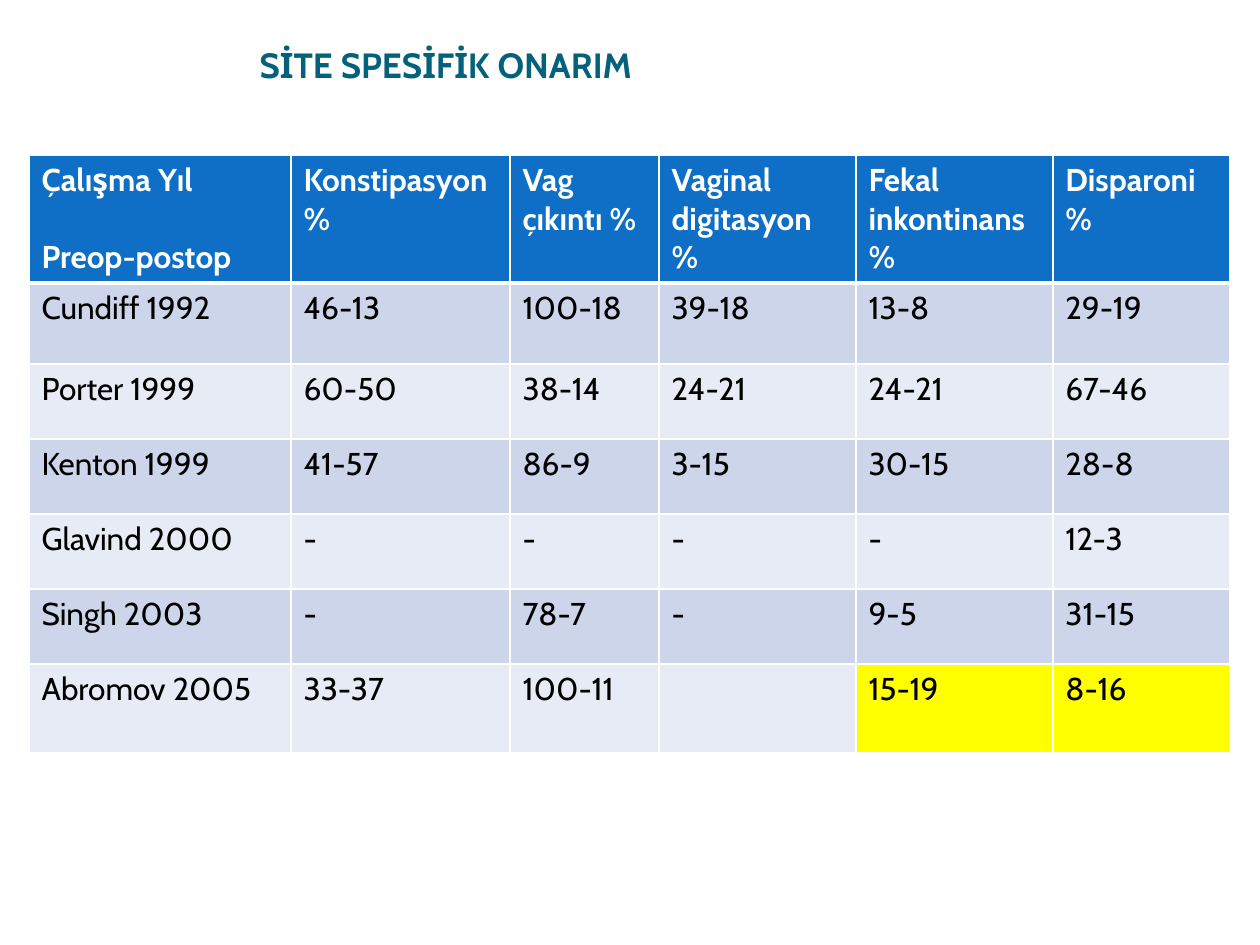
"""Builds a one-slide table of site-specific repair results."""
import pptx
import pptx.dml.color
import pptx.enum.text
import pptx.oxml
import pptx.oxml.ns
import pptx.util
from dataclasses import dataclass

SCALE = 914400 / 126


def px(n):
    return pptx.util.Emu(round(n * SCALE))


def rgb(code):
    return pptx.dml.color.RGBColor.from_string(code)


@dataclass(frozen=True)
class Theme:
    font: str = "Cabin"
    title: str = "04617B"
    head: str = "0F6FC6"
    bands: tuple = ("CCD5EA", "E7EBF5")
    mark: str = "FFFF00"
    light: str = "FFFFFF"
    dark: str = "000000"
    big: int = 20
    body: int = 18
    thin: int = 1
    thick: int = 3
    gap: int = 22


class Deck:
    def __init__(self, theme, wide, high):
        self.theme = theme
        self.prs = pptx.Presentation()
        self.prs.slide_width, self.prs.slide_height = px(wide), px(high)
        self.slide = self.prs.slides.add_slide(self.prs.slide_layouts[5])

    def style(self, para, size, color, bold):
        para.alignment = pptx.enum.text.PP_ALIGN.LEFT
        look = {"name": self.theme.font, "size": pptx.util.Pt(size), "bold": bold}
        for run in para.runs:
            for key, val in look.items():
                setattr(run.font, key, val)
            run.font.color.rgb = rgb(color)

    def title(self, text, left, top, width, height):
        shape = self.slide.shapes.title
        box = {"left": left, "top": top, "width": width, "height": height}
        for key, val in box.items():
            setattr(shape, key, px(val))
        frame = shape.text_frame
        frame.text = text
        frame.word_wrap = True
        frame.vertical_anchor = pptx.enum.text.MSO_ANCHOR.MIDDLE
        self.style(frame.paragraphs[0], self.theme.big, self.theme.title, True)

    def edge(self, cell, side, points):
        line = pptx.oxml.parse_xml(
            f'<a:ln{side} {pptx.oxml.ns.nsdecls("a")} w="{pptx.util.Pt(points)}">'
            f'<a:solidFill><a:srgbClr val="{self.theme.light}"/></a:solidFill></a:ln{side}>')
        cell._tc.get_or_add_tcPr().append(line)

    def cell(self, cell, text, row, fill):
        theme, head = self.theme, row == 0
        widths = {"L": theme.thin, "R": theme.thin,
                  "T": theme.thick if row == 1 else theme.thin,
                  "B": theme.thick if head else theme.thin}
        for side, points in widths.items():
            self.edge(cell, side, points)
        cell.fill.solid()
        cell.fill.fore_color.rgb = rgb(fill)
        cell.text = text
        for para in cell.text_frame.paragraphs:
            self.style(para, theme.body, theme.light if head else theme.dark, head)

    def table(self, rows, left, top, cols, highs, marks):
        theme = self.theme
        frame = self.slide.shapes.add_table(
            len(rows), len(cols), px(left), px(top), px(sum(cols)), px(sum(highs)))
        grid = frame.table
        for col, width in zip(grid.columns, cols):
            col.width = px(width)
        for r, (texts, high) in enumerate(zip(rows, highs)):
            grid.rows[r].height = px(high)
            band = theme.bands[(r - 1) % 2] if r else theme.head
            for c, text in enumerate(texts):
                fill = theme.mark if (r, c) in marks else band
                self.cell(grid.cell(r, c), text, r, fill)
        return grid


ROWS = [
    ["Çalışma Yıl\nPreop-postop", "Konstipasyon%", "Vag çıkıntı %",
     "Vaginal digitasyon %", "Fekal inkontinans %", "Disparoni\n%"],
    ["Cundiff 1992", "46-13", "100-18", "39-18", "13-8", "29-19"],
    ["Porter 1999", "60-50", "38-14", "24-21", "24-21", "67-46"],
    ["Kenton 1999", "41-57", "86-9", "3-15", "30-15", "28-8"],
    ["Glavind 2000", "-", "-", "-", "-", "12-3"],
    ["Singh 2003", "-", "78-7", "-", "9-5", "31-15"],
    ["Abromov 2005", "33-37", "100-11", "", "15-19", "8-16"],
]


def main():
    deck = Deck(Theme(), 1260, 945)
    grid = deck.table(ROWS, 29, 155, [262, 219, 149, 197, 197, 177],
                      [128, 81, 75, 75, 75, 75, 89], {(6, 4), (6, 5)})
    lower = grid.cell(0, 0).text_frame.paragraphs[1]
    lower.space_before = pptx.util.Pt(deck.theme.gap)
    deck.title("SİTE SPESİFİK ONARIM", 247, 0, 756, 129)
    deck.prs.save("out.pptx")


if __name__ == "__main__":
    main()
